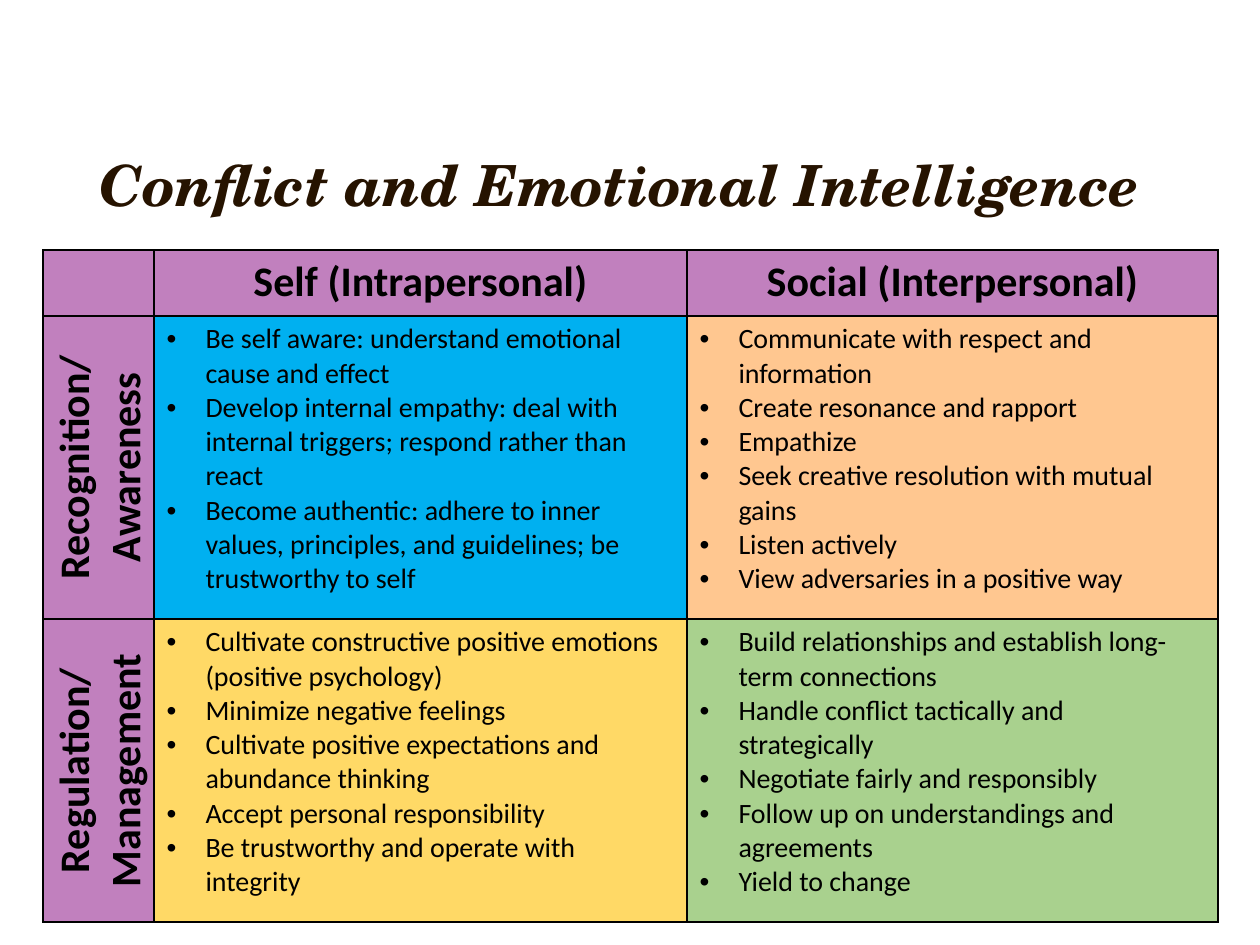
import pptx
import pptx.util
import pptx.dml.color
import pptx.enum.text
import pptx.oxml

# Content
TITLE = "Conflict and Emotional Intelligence"
HEADS = ["Self (Intrapersonal)", "Social (Interpersonal)"]
ROWS = [
    (["Recognition/", "Awareness"],
     ["Be self aware: understand emotional cause and effect",
      "Develop internal empathy: deal with internal triggers; "
      "respond rather than react",
      "Become authentic: adhere to inner values, principles, and "
      "guidelines; be trustworthy to self"],
     ["Communicate with respect and information",
      "Create resonance and rapport",
      "Empathize",
      "Seek creative resolution with mutual gains",
      "Listen actively",
      "View adversaries in a positive way"]),
    (["Regulation/", "Management"],
     ["Cultivate constructive positive emotions (positive psychology)",
      "Minimize negative feelings",
      "Cultivate positive expectations and abundance thinking",
      "Accept personal responsibility",
      "Be trustworthy and operate with integrity"],
     ["Build relationships and establish long-term connections",
      "Handle conflict tactically and strategically",
      "Negotiate fairly and responsibly",
      "Follow up on understandings and agreements",
      "Yield to change"]),
]
COLORS = {"title": "261300", "text": "000000", "line": "000000",
          "head": "C180BE"}
FILLS = [["00B0F0", "FFC790"], ["FFD966", "A9D18E"]]

# Layout in px
LEFT, TOP = 43, 250
WIDTHS = [111, 533, 531]
HEIGHTS = [66, 303, 303]
INDENT = 39

NS = 'xmlns:a="http://schemas.openxmlformats.org/drawingml/2006/main"'
ALIGN = pptx.enum.text.PP_ALIGN


def px(n):
    return pptx.util.Emu(round(n * 914400 / 126))


def style(font, name, size, color, bold):
    font.name, font.size, font.bold = name, pptx.util.Pt(size), bold
    font.color.rgb = pptx.dml.color.RGBColor.from_string(color)


def paint(cell, fill):
    """Give the cell its borders and then its fill."""
    props = cell._tc.get_or_add_tcPr()
    for side in "LRTB":
        props.append(pptx.oxml.parse_xml(
            f'<a:ln{side} {NS} w="12700"><a:solidFill>'
            f'<a:srgbClr val="{COLORS["line"]}"/></a:solidFill></a:ln{side}>'))
    cell.fill.solid()
    cell.fill.fore_color.rgb = pptx.dml.color.RGBColor.from_string(fill)


def write(cell, lines, head):
    """Fill a cell with centred heading lines or with a bullet list."""
    cell.text = "\n".join(lines)
    for para in cell.text_frame.paragraphs:
        if head:
            para.alignment = ALIGN.CENTER
        else:
            props = para._p.get_or_add_pPr()
            props.set("marL", str(px(INDENT)))
            props.set("indent", str(-px(INDENT)))
            for tag in ('buFont %s typeface="Arial"', 'buChar %s char="•"'):
                props.append(pptx.oxml.parse_xml(f"<a:{tag % NS}/>"))
        style(para.font, "Calibri", 24 if head else 16, COLORS["text"], head)


deck = pptx.Presentation()
deck.slide_width, deck.slide_height = px(1260), px(945)
slide = deck.slides.add_slide(deck.slide_layouts[5])

# Title
title = slide.shapes.title
title.left, title.top, title.width, title.height = map(px, (87, 125, 1086, 126))
frame = title.text_frame
frame.text = TITLE
frame.word_wrap = True
frame.auto_size = pptx.enum.text.MSO_AUTO_SIZE.NONE
frame.vertical_anchor = pptx.enum.text.MSO_ANCHOR.MIDDLE
para = frame.paragraphs[0]
para.alignment, para.line_spacing = ALIGN.LEFT, 0.9
style(para.font, "TeX Gyre Schola", 32.4, COLORS["title"], True)
para.font.italic = True

# Table
table = slide.shapes.add_table(
    len(HEIGHTS), len(WIDTHS), px(LEFT), px(TOP),
    px(sum(WIDTHS)), px(sum(HEIGHTS))).table
table.first_row = table.horz_banding = False
for col, width in zip(table.columns, WIDTHS):
    col.width = px(width)
for row, height in zip(table.rows, HEIGHTS):
    row.height = px(height)

# Cells
grid = [([], *([head] for head in HEADS)), *ROWS]
for r, row in enumerate(grid):
    for c, lines in enumerate(row):
        cell = table.cell(r, c)
        head = r == 0 or c == 0
        paint(cell, COLORS["head"] if head else FILLS[r - 1][c - 1])
        if lines:
            write(cell, lines, head)
        if r and c == 0:
            cell._tc.get_or_add_tcPr().set("vert", "vert270")

deck.save("out.pptx")
